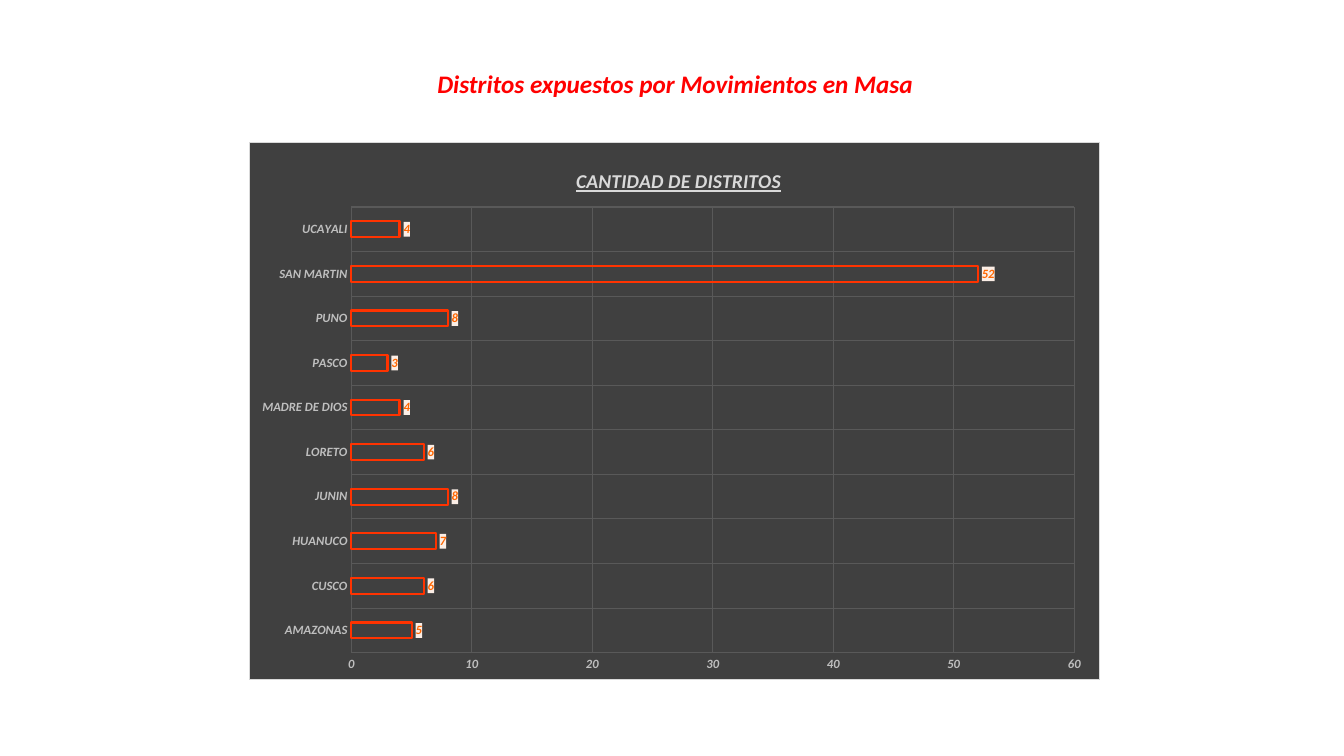
from lxml import etree
from pptx import Presentation
from pptx.chart.data import CategoryChartData
from pptx.dml.color import RGBColor
from pptx.enum.chart import XL_CHART_TYPE, XL_LABEL_POSITION, XL_TICK_MARK
from pptx.enum.text import MSO_ANCHOR, PP_ALIGN
from pptx.oxml import parse_xml
from pptx.oxml.ns import nsdecls, qn
from pptx.util import Cm, Pt

BAR = XL_CHART_TYPE.BAR_CLUSTERED
OUTSIDE = XL_LABEL_POSITION.OUTSIDE_END
NO_TICK = XL_TICK_MARK.NONE
CENTER = PP_ALIGN.CENTER
MIDDLE = MSO_ANCHOR.MIDDLE

FACE = "Calibri"
COLORS = {
    "title": "FF0000",
    "panel": "404040",
    "border": "D9D9D9",
    "grid": "595959",
    "axis": "BFBFBF",
    "bar": "FF3300",
    "label": "FF6600",
    "tag": "FBEEE6",
}
COUNTS = {
    "AMAZONAS": 5, "CUSCO": 6, "HUANUCO": 7, "JUNIN": 8, "LORETO": 6,
    "MADRE DE DIOS": 4, "PASCO": 3, "PUNO": 8, "SAN MARTIN": 52, "UCAYALI": 4,
}


def color(name):
    return RGBColor.from_string(COLORS[name])


def style(font, size, name):
    font.name = FACE
    font.size = Pt(size)
    font.bold = font.italic = True
    font.color.rgb = color(name)


def paint(fill, line=None):
    """Shape properties for chart parts that have no format object."""
    edge = ""
    if line:
        edge = (f'<a:ln w="9525"><a:solidFill><a:srgbClr val="{COLORS[line]}"/>'
                '</a:solidFill></a:ln>')
    return parse_xml(
        f'<c:spPr {nsdecls("c", "a")}><a:solidFill><a:srgbClr val="{COLORS[fill]}"/>'
        f'</a:solidFill>{edge}</c:spPr>')


def place(parent, index, inner=False, **spots):
    """Fix the place of a chart part, in shares of the chart."""
    for old in parent.findall(qn("c:layout")):
        parent.remove(old)
    layout = etree.Element(qn("c:layout"))
    manual = etree.SubElement(layout, qn("c:manualLayout"))
    if inner:
        etree.SubElement(manual, qn("c:layoutTarget")).set("val", "inner")
    for key in ("x", "y"):
        etree.SubElement(manual, qn(f"c:{key}Mode")).set("val", "edge")
    for key, share in spots.items():
        etree.SubElement(manual, qn(f"c:{key}")).set("val", str(share))
    parent.insert(index, layout)


def add_title(slide, left, top, width, height):
    box = slide.shapes.add_textbox(left, top, width, height)
    frame = box.text_frame
    frame.word_wrap = False
    frame.vertical_anchor = MIDDLE
    para = frame.paragraphs[0]
    para.alignment = CENTER
    run = para.add_run()
    run.text = "Distritos expuestos por Movimientos en Masa"
    style(run.font, 18, "title")


def set_axis(axis):
    axis.major_tick_mark = axis.minor_tick_mark = NO_TICK
    axis.format.line.fill.background()
    axis.has_major_gridlines = True
    grid = axis.major_gridlines.format.line
    grid.color.rgb = color("grid")
    grid.width = Pt(0.75)
    style(axis.tick_labels.font, 9, "axis")


def add_bars(slide, left, top, width, height):
    data = CategoryChartData(number_format="#,##0")
    data.categories = list(COUNTS)
    data.add_series("Series 1", list(COUNTS.values()))
    chart = slide.shapes.add_chart(BAR, left, top, width, height, data).chart
    chart.has_legend = False
    chart.font.name = FACE
    chart.font.size = Pt(10)

    # Panel and plot area
    space = chart.element
    space.find(qn("c:chart")).addnext(paint("panel", "border"))
    area = space.find(".//" + qn("c:plotArea"))
    place(area, 0, inner=True, x=0.12, y=0.12, w=0.85, h=0.83)

    # Chart title
    chart.has_title = True
    run = chart.chart_title.text_frame.paragraphs[0].add_run()
    run.text = "CANTIDAD DE DISTRITOS"
    style(run.font, 14, "border")
    run.font.underline = True
    place(space.find(".//" + qn("c:title")), 1, x=0.38, y=0.04)

    # Axes
    set_axis(chart.category_axis)
    axis = chart.value_axis
    set_axis(axis)
    axis.minimum_scale, axis.maximum_scale, axis.major_unit = 0, 60, 10
    axis.tick_labels.number_format = "#,##0"
    axis.tick_labels.number_format_is_linked = False

    # Bars
    plot = chart.plots[0]
    plot.vary_by_categories = False
    plot.gap_width, plot.overlap = 182, -50
    bars = plot.series[0]
    bars.format.fill.background()
    bars.format.line.color.rgb = color("bar")
    bars.format.line.width = Pt(1.5)

    # Value labels
    labels = bars.data_labels
    labels.show_value = True
    labels.position = OUTSIDE
    labels.number_format = "#,##0"
    labels.number_format_is_linked = False
    style(labels.font, 9, "label")
    bars.format.line  # keep the outline defined before the labels
    tags = space.find(".//" + qn("c:ser")).find(qn("c:dLbls"))
    tags.find(qn("c:txPr")).addprevious(paint("tag"))


def main():
    deck = Presentation()
    deck.slide_width, deck.slide_height = Cm(33.87), Cm(19.05)
    slide = deck.slides.add_slide(deck.slide_layouts[6])
    add_title(slide, Cm(10.69), Cm(1.6), Cm(12.65), Cm(1.02))
    add_bars(slide, Cm(6.27), Cm(3.58), Cm(21.46), Cm(13.56))
    deck.save("out.pptx")


if __name__ == "__main__":
    main()
